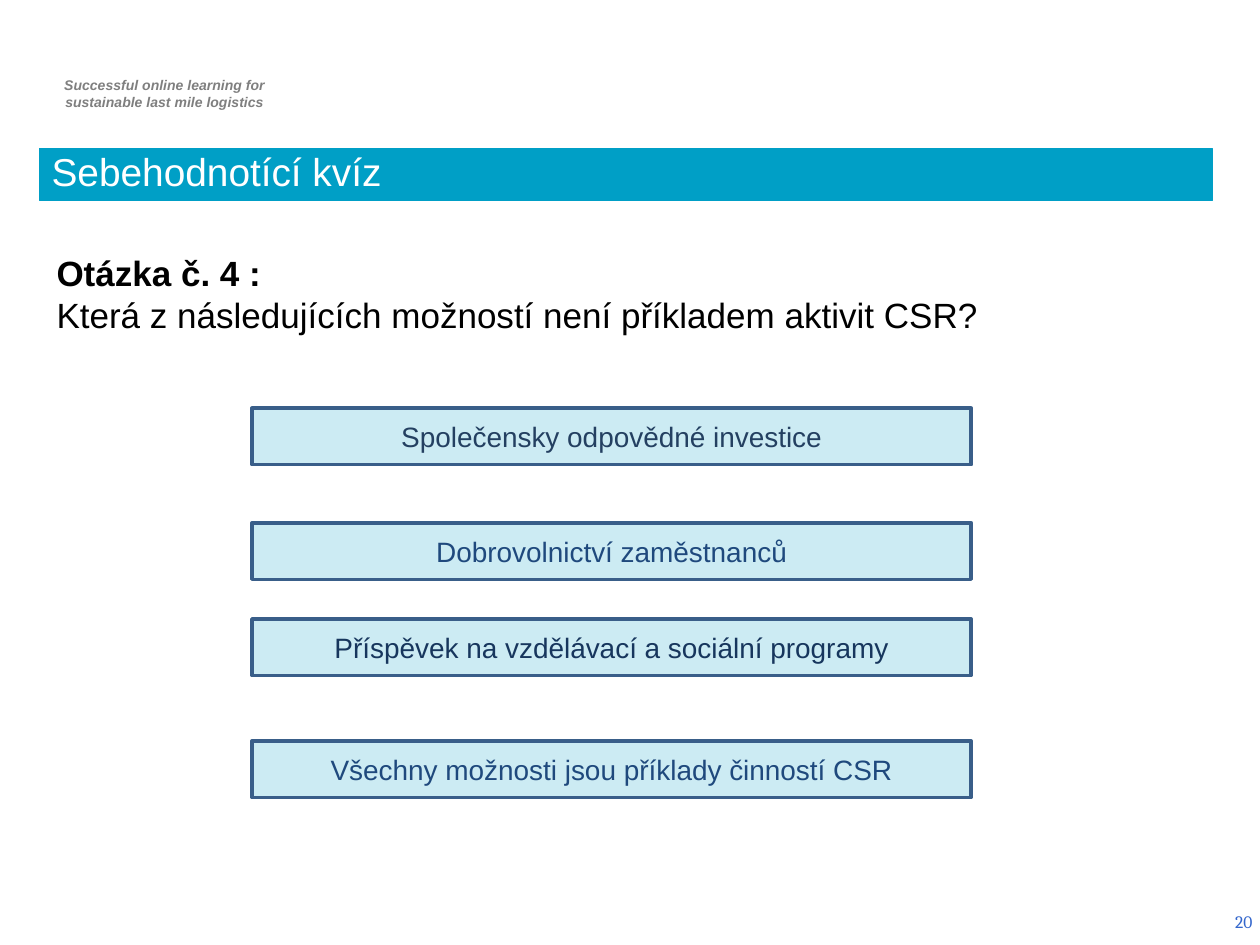
"""Build a quiz slide with one question and four answer boxes."""
from lxml import etree
from pptx import Presentation
from pptx.dml.color import RGBColor
from pptx.enum.shapes import MSO_SHAPE
from pptx.enum.text import MSO_ANCHOR, MSO_AUTO_SIZE, PP_ALIGN
from pptx.oxml.ns import qn
from pptx.util import Cm, Pt

LEFT, CENTER, RIGHT = PP_ALIGN.LEFT, PP_ALIGN.CENTER, PP_ALIGN.RIGHT
TOP, MIDDLE, BOTTOM = MSO_ANCHOR.TOP, MSO_ANCHOR.MIDDLE, MSO_ANCHOR.BOTTOM
RECTANGLE, NO_FIT = MSO_SHAPE.RECTANGLE, MSO_AUTO_SIZE.NONE

TITLE = "Sebehodnotící kvíz"
TAGLINE = ["Successful online learning for", "sustainable last mile logistics"]
QUESTION = [
    "Otázka č. 4 :",
    "Která z následujících možností není příkladem aktivit CSR?",
]
PAGE_NUMBER = "20"
ANSWERS = [
    ("Společensky odpovědné investice", 8.23, "244061"),
    ("Dobrovolnictví zaměstnanců", 10.54, "1F497D"),
    ("Příspěvek na vzdělávací a sociální programy", 12.48, "17365D"),
    ("Všechny možnosti jsou příklady činností CSR", 14.94, "1F497D"),
]

THEME = {
    "accent": "009FC6",
    "border": "395E89",
    "answer_alpha": 20,
    "title": {"name": "Arial", "size": 22.2, "color": "FFFFFF", "bold": False},
    "tagline": {"name": "Arial", "size": 8, "color": "7F7F7F", "bold": True, "italic": True},
    "heading": {"name": "Arial", "size": 20, "color": "000000", "bold": True},
    "question": {"name": "Arial", "size": 20, "color": "000000", "bold": False},
    "answer": {"name": "Arial", "size": 16},
    "number": {"name": "Cambria", "size": 10, "color": "3366CC"},
}


def style_font(font, style):
    for name, value in style.items():
        if name == "color":
            font.color.rgb = RGBColor.from_string(value)
        else:
            setattr(font, name, Pt(value) if name == "size" else value)


def write(shape, lines, styles, align=LEFT, anchor=TOP):
    frame = shape.text_frame
    settings = {
        "text": "\n".join(lines),
        "word_wrap": True,
        "auto_size": NO_FIT,
        "vertical_anchor": anchor,
        "margin_left": Cm(0.25),
        "margin_right": Cm(0.25),
        "margin_top": Cm(0.13),
        "margin_bottom": Cm(0.13),
    }
    for name, value in settings.items():
        setattr(frame, name, value)
    for para, style in zip(frame.paragraphs, styles):
        para.alignment = align
        style_font(para.font, style)
        for span in para.runs:
            style_font(span.font, style)
    return frame


def paint(shape, fill, line, width, alpha=None):
    shape.fill.solid()
    shape.fill.fore_color.rgb = RGBColor.from_string(fill)
    shape.line.color.rgb = RGBColor.from_string(line)
    shape.line.width = Pt(width)
    if alpha is not None:
        color = shape.fill._xPr.find(qn("a:solidFill"))[0]
        etree.SubElement(color, qn("a:alpha"), val=str(alpha * 1000))


def add_text(page, place, *content):
    box = page.shapes.add_textbox(*map(Cm, place))
    return write(box, *content)


def add_title(page):
    title = page.shapes.title
    bounds = {"left": 0.79, "top": 3, "width": 23.65, "height": 1.04}
    for name, value in bounds.items():
        setattr(title, name, Cm(value))
    paint(title, THEME["accent"], THEME["accent"], 0.75)
    frame = write(title, [TITLE], [THEME["title"]], LEFT, BOTTOM)
    frame.paragraphs[0].line_spacing = 0.8


def add_answer(page, text, top, color):
    box = page.shapes.add_shape(RECTANGLE, Cm(5.08), Cm(top), Cm(14.5), Cm(1.14))
    box.shadow.inherit = False
    paint(box, THEME["accent"], THEME["border"], 2, THEME["answer_alpha"])
    write(box, [text], [THEME["answer"] | {"color": color}], CENTER, MIDDLE)


def main():
    deck = Presentation()
    deck.slide_width, deck.slide_height = Cm(25.4), Cm(19.05)
    page = deck.slides.add_slide(deck.slide_layouts.get_by_name("Title Only"))
    add_title(page)
    add_text(page, (0.74, 1.42, 5.16, 0.94), TAGLINE, [THEME["tagline"]] * 2, CENTER)
    add_text(page, (0.89, 4.95, 23.65, 2.1), QUESTION, [THEME["heading"], THEME["question"]])
    for answer in ANSWERS:
        add_answer(page, *answer)
    number = add_text(
        page, (19.58, 18.1, 5.82, 0.95), [PAGE_NUMBER], [THEME["number"]], RIGHT, MIDDLE
    )
    number.margin_right = Cm(0.15)
    deck.save("out.pptx")


if __name__ == "__main__":
    main()
